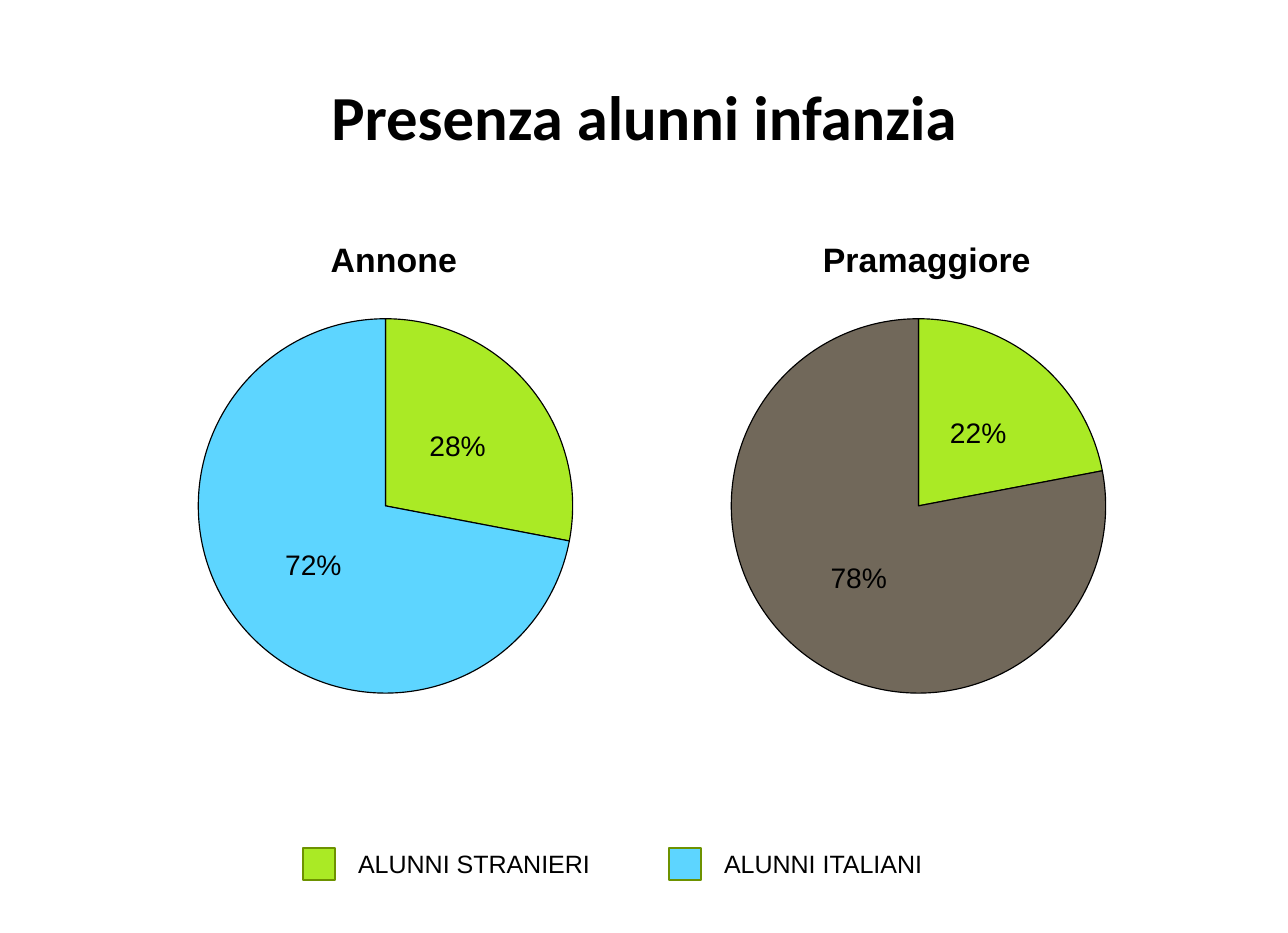
import pptx
import pptx.chart.data
import pptx.dml.color
import pptx.enum.chart
import pptx.enum.shapes
import pptx.enum.text
import pptx.oxml
import pptx.oxml.ns
import pptx.util

EMU_PER_PX = 914400 / 112.8
BLACK = "000000"
GREEN = "AAEA25"
BLUE = "5DD5FF"
BROWN = "71685A"
OLIVE = "6D9200"


def px(length):
    return pptx.util.Emu(round(length * EMU_PER_PX))


def color(hex_string):
    return pptx.dml.color.RGBColor.from_string(hex_string)


def place(parent, index, **fractions):
    for layout in parent.findall(pptx.oxml.ns.qn("c:layout")):
        parent.remove(layout)
    target = '<c:layoutTarget val="inner"/>' if "w" in fractions else ""
    modes = "".join(f'<c:{axis}Mode val="edge"/>' for axis in "xy")
    values = "".join(f'<c:{name} val="{value}"/>' for name, value in fractions.items())
    parent.insert(index, pptx.oxml.parse_xml(
        f'<c:layout {pptx.oxml.ns.nsdecls("c")}><c:manualLayout>'
        f"{target}{modes}{values}</c:manualLayout></c:layout>"))


class SlideBuilder:
    def __init__(self, slide, font):
        self.slide = slide
        self.font = font

    def style(self, font, size, name=None, bold=False):
        font.name = name or self.font
        font.size = pptx.util.Pt(size)
        font.bold = bold
        font.color.rgb = color(BLACK)

    def text(self, content, left, top, width, height, size, name=None,
             bold=False, align=pptx.enum.text.PP_ALIGN.LEFT):
        box = self.slide.shapes.add_textbox(px(left), px(top), px(width), px(height))
        frame = box.text_frame
        frame.word_wrap = True
        frame.vertical_anchor = pptx.enum.text.MSO_ANCHOR.MIDDLE
        paragraph = frame.paragraphs[0]
        paragraph.alignment = align
        run = paragraph.add_run()
        run.text = content
        self.style(run.font, size, name, bold)

    def swatch(self, left, top, side, fill):
        shape = self.slide.shapes.add_shape(
            pptx.enum.shapes.MSO_SHAPE.RECTANGLE, px(left), px(top), px(side), px(side))
        shape.shadow.inherit = False
        shape.fill.solid()
        shape.fill.fore_color.rgb = color(fill)
        shape.line.color.rgb = color(OLIVE)
        shape.line.width = pptx.util.Pt(0.85)

    def pie(self, title, values, fills, left, title_left):
        data = pptx.chart.data.CategoryChartData(number_format="0%")
        data.categories = ["1", "2"]
        data.add_series(title, values)
        chart = self.slide.shapes.add_chart(
            pptx.enum.chart.XL_CHART_TYPE.PIE,
            px(left), px(180), px(407), px(572), data).chart
        chart.has_legend = False
        self.style(chart.font, 18)

        chart.has_title = True
        run = chart.chart_title.text_frame.paragraphs[0].add_run()
        run.text = title
        self.style(run.font, 21.6, bold=True)
        place(chart.element.xpath("c:chart/c:title")[0], 1, x=title_left, y=0.09)
        place(chart.element.xpath("c:chart/c:plotArea")[0], 0,
              x=0.04, y=0.24, w=0.92, h=0.66)

        plot = chart.plots[0]
        plot.vary_by_categories = True
        for index, fill in enumerate(fills):
            slice_format = plot.series[0].points[index].format
            slice_format.fill.solid()
            slice_format.fill.fore_color.rgb = color(fill)
            slice_format.line.color.rgb = color(BLACK)
            slice_format.line.width = pptx.util.Pt(0.75)
        plot.has_data_labels = True
        labels = plot.data_labels
        labels.show_value = True
        labels.show_percentage = False
        labels.number_format = "0%"
        labels.number_format_is_linked = False
        labels.position = pptx.enum.chart.XL_LABEL_POSITION.CENTER
        self.style(labels.font, 18)

    def legend_entry(self, content, fill, left):
        self.swatch(left, 848, 32, fill)
        self.text(content, left + 44, 843, 346, 42, 16)


def main():
    presentation = pptx.Presentation()
    presentation.slide_width = px(1288)
    presentation.slide_height = px(933)
    slide = presentation.slides.add_slide(presentation.slide_layouts[6])
    builder = SlideBuilder(slide, "Arial")

    builder.text("Presenza alunni infanzia", 64, 37, 1160, 156, 40, "Calibri", True,
                 pptx.enum.text.PP_ALIGN.CENTER)
    builder.pie("Annone", (0.28, 0.72), (GREEN, BLUE), 182, 0.35)
    builder.pie("Pramaggiore", (0.22, 0.78), (GREEN, BROWN), 715, 0.25)
    builder.legend_entry("ALUNNI STRANIERI", GREEN, 303)
    builder.legend_entry("ALUNNI ITALIANI", BLUE, 669)
    presentation.save("out.pptx")


if __name__ == "__main__":
    main()
